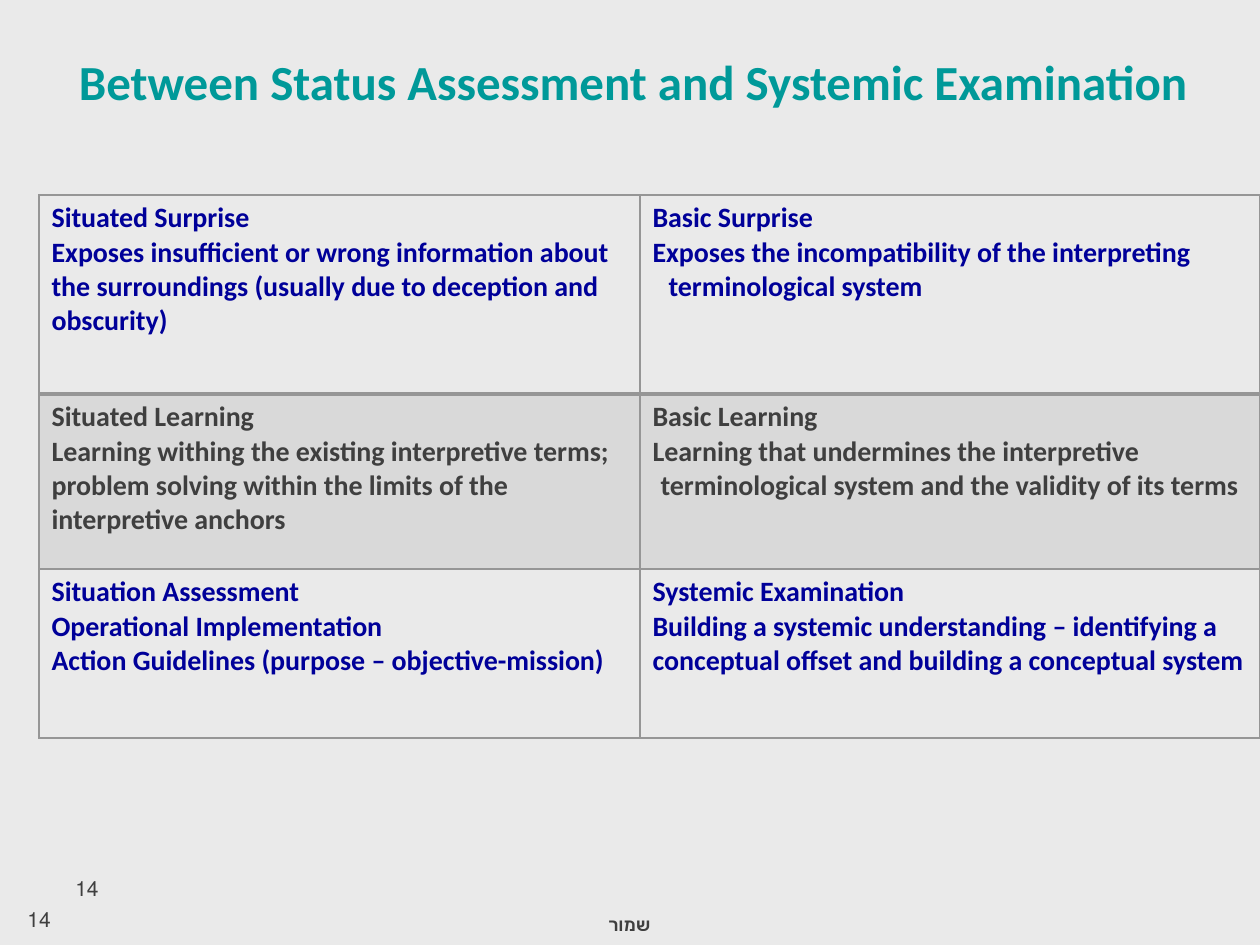
from dataclasses import dataclass

from lxml.etree import SubElement
from pptx import Presentation
from pptx.dml.color import RGBColor as Color
from pptx.enum.text import MSO_ANCHOR as Anchor, PP_ALIGN as Align
from pptx.oxml.ns import qn
from pptx.util import Emu, Pt

PX_PER_INCH = 126


@dataclass(frozen=True)
class Theme:
    """Colours, font and type sizes of the slide."""

    font: str = "Calibri"
    background: str = "EAEAEA"
    title: str = "009999"
    navy: str = "000099"
    grey: str = "3F3F3F"
    rule: str = "969696"
    title_size: int = 28
    cell_size: int = 16
    number_size: int = 12
    footer_size: int = 10


THEME = Theme()
TITLE = "Between Status Assessment and Systemic Examination"
COLUMN_WIDTHS = (601, 620)
ROW_HEIGHTS = (199, 175, 169)
ROW_COLORS = (THEME.navy, THEME.grey, THEME.navy)
SHADED_ROW = 1
HANGING_INDENTS = {(0, 1): 16, (1, 1): 8}
ROWS = (
    (
        (
            "Situated Surprise",
            "Exposes insufficient or wrong information about the surroundings "
            "(usually due to deception and obscurity)",
        ),
        (
            "Basic Surprise",
            "Exposes the incompatibility of the interpreting terminological system",
        ),
    ),
    (
        (
            "Situated Learning",
            "Learning withing the existing interpretive terms; problem solving "
            "within the limits of the interpretive anchors",
        ),
        (
            "Basic Learning",
            "Learning that undermines the interpretive terminological system "
            "and the validity of its terms",
        ),
    ),
    (
        (
            "Situation Assessment",
            "Operational Implementation",
            "Action Guidelines (purpose – objective-mission)",
        ),
        (
            "Systemic Examination",
            "Building a systemic understanding – identifying a conceptual offset "
            "and building a conceptual system",
        ),
    ),
)


def px(length):
    """Turn pixels into EMU."""
    return Emu(round(length * 914400 / PX_PER_INCH))


def write_run(paragraph, text, size, color, bold=True, align=Align.LEFT):
    """Add one formatted run to an aligned paragraph."""
    paragraph.alignment = align
    run = paragraph.add_run()
    run.text = text
    run.font.name = THEME.font
    run.font.size = Pt(size)
    run.font.bold = bold
    run.font.color.rgb = Color.from_string(color)


def set_title(slide):
    """Place and format the title placeholder."""
    title = slide.shapes.title
    title.left, title.top, title.width, title.height = map(px, (66, 45, 1134, 118))
    frame = title.text_frame
    frame.word_wrap = False
    frame.vertical_anchor = Anchor.TOP
    write_run(frame.paragraphs[0], TITLE, THEME.title_size, THEME.title, align=Align.CENTER)


def add_label(slide, box, text, size, bold=False, align=Align.LEFT):
    """Add a right-to-left label at the foot of the slide."""
    frame = slide.shapes.add_textbox(*map(px, box)).text_frame
    frame.word_wrap = True
    paragraph = frame.paragraphs[0]
    write_run(paragraph, text, size, THEME.grey, bold, align)
    paragraph._p.get_or_add_pPr().set("rtl", "1")


def set_borders(cell, top, bottom):
    """Rule all four sides of a cell, with widths in points."""
    properties = cell._tc.get_or_add_tcPr()
    for side, width in (("L", 1), ("R", 1), ("T", top), ("B", bottom)):
        line = SubElement(properties, qn(f"a:ln{side}"), w=str(Pt(width)))
        fill = SubElement(line, qn("a:solidFill"))
        SubElement(fill, qn("a:srgbClr"), val=THEME.rule)


def set_fill(cell, shaded):
    """Give a cell a translucent grey fill, or none."""
    if not shaded:
        cell.fill.background()
        return
    cell.fill.solid()
    cell.fill.fore_color.rgb = Color.from_string(THEME.rule)
    color = cell._tc.tcPr.find(qn("a:solidFill")).find(qn("a:srgbClr"))
    SubElement(color, qn("a:alpha"), val="20000")


def write_cell(cell, lines, color, hanging):
    """Write the paragraphs of a cell."""
    frame = cell.text_frame
    for index, line in enumerate(lines):
        paragraph = frame.add_paragraph() if index else frame.paragraphs[0]
        write_run(paragraph, line, THEME.cell_size, color)
        if hanging:
            properties = paragraph._p.get_or_add_pPr()
            properties.set("marL", str(px(hanging)))
            properties.set("indent", str(-px(hanging)))


def add_comparison_table(slide):
    """Add the table that sets situated against basic terms."""
    frame = slide.shapes.add_table(
        len(ROWS), len(COLUMN_WIDTHS),
        px(39), px(195), px(sum(COLUMN_WIDTHS)), px(sum(ROW_HEIGHTS)),
    )
    table = frame.table
    table.first_row = table.horz_banding = False
    for column, width in zip(table.columns, COLUMN_WIDTHS):
        column.width = px(width)
    for row, height in zip(table.rows, ROW_HEIGHTS):
        row.height = px(height)
    for row_index, row in enumerate(ROWS):
        shaded = row_index == SHADED_ROW
        for column_index, lines in enumerate(row):
            cell = table.cell(row_index, column_index)
            hanging = HANGING_INDENTS.get((row_index, column_index), 0)
            set_borders(cell, 2 if shaded else 1, 2 if row_index == 0 else 1)
            set_fill(cell, shaded)
            write_cell(cell, lines, ROW_COLORS[row_index], hanging)


def main():
    """Build the slide and save it."""
    presentation = Presentation()
    presentation.slide_width, presentation.slide_height = px(1260), px(945)
    slide = presentation.slides.add_slide(presentation.slide_layouts[5])
    background = slide.background.fill
    background.solid()
    background.fore_color.rgb = Color.from_string(THEME.background)
    add_label(slide, (15, 900, 294, 50), "14", THEME.number_size)
    add_label(slide, (490, 908, 173, 50), "שמור", THEME.footer_size, True, Align.RIGHT)
    add_label(slide, (63, 869, 213, 50), "14", THEME.number_size)
    set_title(slide)
    add_comparison_table(slide)
    presentation.save("out.pptx")


if __name__ == "__main__":
    main()
